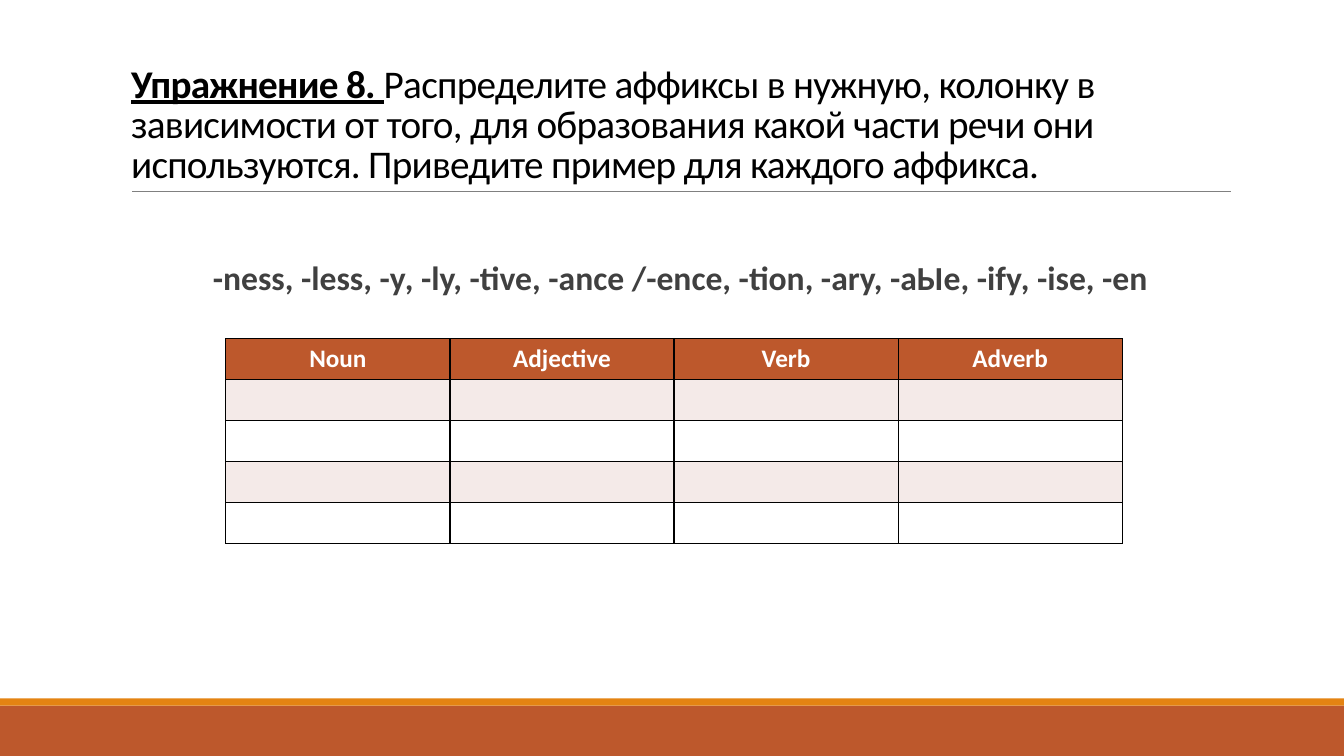
from pptx import Presentation
from pptx.dml.color import RGBColor
from pptx.enum.shapes import MSO_CONNECTOR as CONN, MSO_SHAPE as SHAPE
from pptx.enum.text import MSO_ANCHOR as ANCHOR, MSO_AUTO_SIZE as FIT, PP_ALIGN as ALIGN
from pptx.oxml import parse_xml
from pptx.oxml.ns import nsdecls
from pptx.util import Inches, Pt

RUST, AMBER, PINK = "BD582C", "E48312", "F4EAE8"
WHITE, BLACK, GREY, DARK = "FFFFFF", "000000", "808080", "404040"
HEADS = ["Noun", "Adjective", "Verb", "Adverb"]
ROWS = 5


def color(code):
    return RGBColor.from_string(code)


def place(shape, left, top, width, height):
    shape.left, shape.top = Inches(left), Inches(top)
    shape.width, shape.height = Inches(width), Inches(height)


def add_run(para, text, size, code, bold=False, under=False):
    run = para.add_run()
    run.text = text
    font = run.font
    font.name, font.size = "Calibri", Pt(size)
    font.bold, font.underline = bold, under
    font.color.rgb = color(code)
    return run


def add_bar(slide, top, height, code):
    bar = slide.shapes.add_shape(
        SHAPE.RECTANGLE, 0, Inches(top), Inches(13.33), Inches(height))
    bar.shadow.inherit = False
    bar.fill.solid()
    bar.fill.fore_color.rgb = color(code)
    bar.line.fill.background()


def add_rule(slide, left, right, top):
    rule = slide.shapes.add_connector(
        CONN.STRAIGHT, Inches(left), Inches(top), Inches(right), Inches(top))
    rule.line.color.rgb = color(GREY)
    rule.line.width = Pt(0.5)
    rule._element.spPr.append(parse_xml(f"<a:effectLst {nsdecls('a')}/>"))


def set_title(slide):
    title = slide.shapes.title
    place(title, 1.2, 0.31, 11, 1.59)
    frame = title.text_frame
    frame.word_wrap, frame.auto_size = True, FIT.NONE
    frame.vertical_anchor = ANCHOR.BOTTOM
    para = frame.paragraphs[0]
    para.alignment, para.line_spacing = ALIGN.LEFT, 0.85
    runs = [
        add_run(para, "Упражнение 8. ", 28, BLACK, bold=True, under=True),
        add_run(para, "Распределите аффиксы в нужную, колонку в зависимости "
                "от того, для образования какой части речи они используются. "
                "Приведите пример для каждого аффикса.", 28, BLACK),
    ]
    for run in runs:
        run._r.get_or_add_rPr().set("spc", "-50")


def add_list(slide):
    box = slide.shapes.add_textbox(0, 0, 0, 0)
    place(box, 1.2, 2.02, 11, 4.4)
    frame = box.text_frame
    frame.word_wrap = True
    frame.margin_left, frame.margin_right = Inches(0.1), 0
    frame.margin_top = Inches(0.57)
    para = frame.paragraphs[0]
    para.alignment, para.line_spacing = ALIGN.CENTER, 0.9
    add_run(para, "-ness, -less, -у, -ly, -tive, -ance /-ence, -tion, -аry, "
            "-аЫе, -ifу, -ise, -en", 24, DARK, bold=True)


def style_cell(cell, code):
    props = cell._tc.get_or_add_tcPr()
    for side in ("lnL", "lnR", "lnT", "lnB"):
        props.append(parse_xml(
            f'<a:{side} {nsdecls("a")} w="{Pt(1)}"><a:solidFill>'
            f'<a:srgbClr val="{BLACK}"/></a:solidFill></a:{side}>'))
    cell.fill.solid()
    cell.fill.fore_color.rgb = color(code)


def add_grid(slide):
    table = slide.shapes.add_table(
        ROWS, len(HEADS), Inches(2.24), Inches(3.36),
        Inches(8.89), Inches(2.03)).table
    for r in range(ROWS):
        fill = RUST if r == 0 else PINK if r % 2 else WHITE
        for c, head in enumerate(HEADS):
            cell = table.cell(r, c)
            style_cell(cell, fill)
            if r == 0:
                para = cell.text_frame.paragraphs[0]
                para.alignment = ALIGN.CENTER
                add_run(para, head, 18, WHITE, bold=True)


def main():
    deck = Presentation()
    deck.slide_width, deck.slide_height = Inches(13.33), Inches(7.5)
    slide = deck.slides.add_slide(deck.slide_layouts[5])
    add_bar(slide, 7, 0.5, RUST)
    add_bar(slide, 6.93, 0.07, AMBER)
    add_rule(slide, 1.31, 12.21, 1.9)
    set_title(slide)
    add_list(slide)
    add_grid(slide)
    deck.save("out.pptx")


if __name__ == "__main__":
    main()
